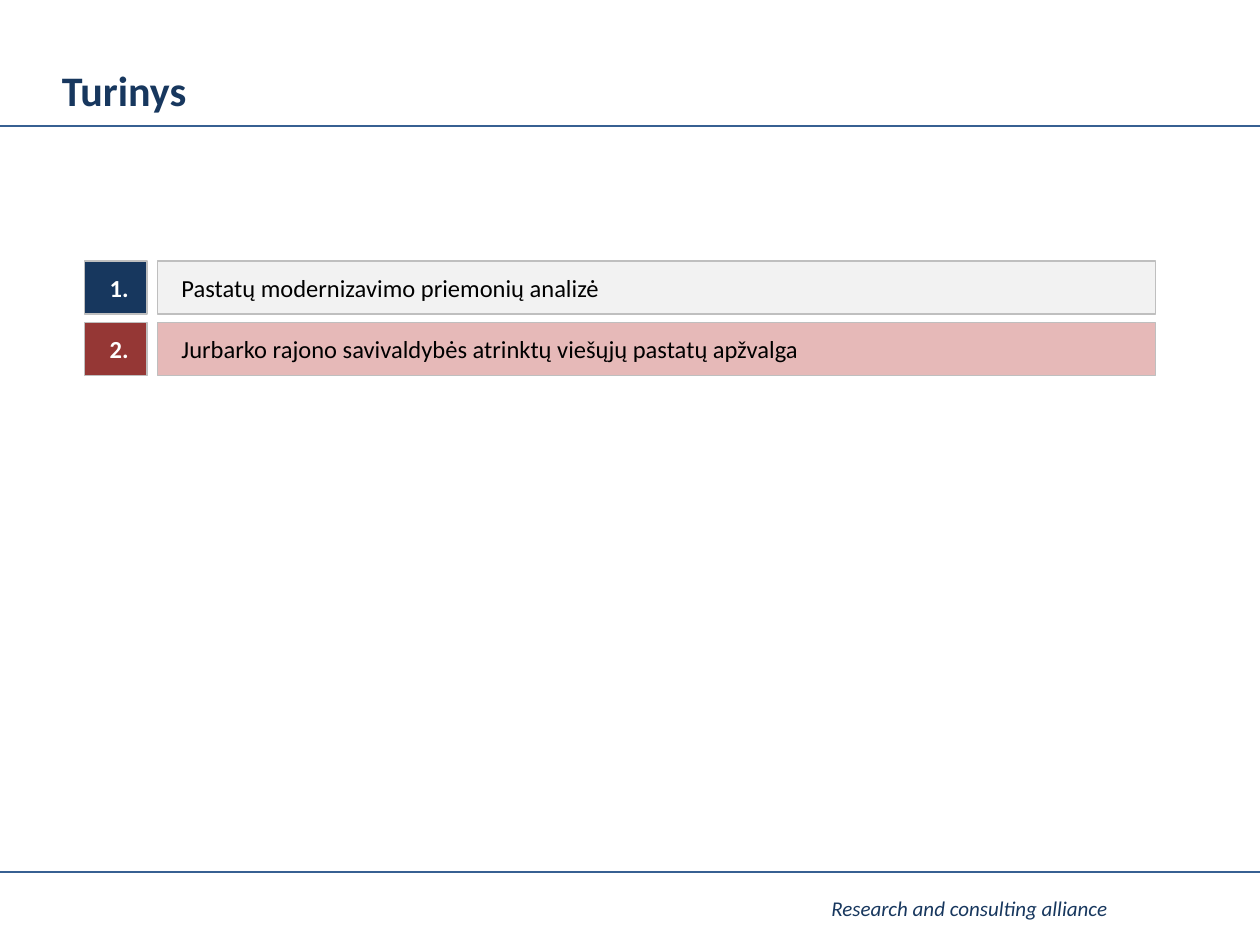
from dataclasses import dataclass

from lxml.etree import SubElement
from pptx import Presentation
from pptx.dml.color import RGBColor
from pptx.enum.shapes import MSO_CONNECTOR, MSO_SHAPE
from pptx.enum.text import MSO_ANCHOR, MSO_AUTO_SIZE, PP_ALIGN
from pptx.oxml.ns import qn
from pptx.util import Inches, Pt


@dataclass(frozen=True)
class Theme:
    font: str = "Calibri"
    navy: str = "17375E"
    rule: str = "376092"
    border: str = "BFBFBF"
    grey: str = "F2F2F2"
    red: str = "953735"
    pink: str = "E6B9B8"
    white: str = "FFFFFF"
    black: str = "000000"
    title_size: int = 24
    item_size: int = 14
    footer_size: int = 12
    line_width: int = 1


THEME = Theme()
SLIDE_WIDTH, SLIDE_HEIGHT = 10, 7.5

AGENDA = [
    ("Pastatų modernizavimo priemonių analizė", THEME.navy, THEME.grey),
    ("Jurbarko rajono savivaldybės atrinktų viešųjų pastatų apžvalga",
     THEME.red, THEME.pink),
]


def rgb(value):
    return RGBColor.from_string(value)


def write(shape, text, size, color, bold=False, italic=False):
    """Fill a shape with one left-aligned, vertically centred paragraph."""
    frame = shape.text_frame
    frame.word_wrap = True
    frame.auto_size = MSO_AUTO_SIZE.NONE
    frame.vertical_anchor = MSO_ANCHOR.MIDDLE
    paragraph = frame.paragraphs[0]
    paragraph.text = text
    paragraph.alignment = PP_ALIGN.LEFT
    font = paragraph.font
    font.name, font.size = THEME.font, Pt(size)
    font.bold, font.italic = bold, italic
    font.color.rgb = rgb(color)
    return paragraph


def add_rule(slide, top):
    """Draw a line across the full slide width."""
    rule = slide.shapes.add_connector(
        MSO_CONNECTOR.STRAIGHT, 0, Inches(top), Inches(SLIDE_WIDTH), Inches(top))
    rule.line.color.rgb = rgb(THEME.rule)
    rule.line.width = Pt(THEME.line_width)
    SubElement(rule._element.spPr, qn("a:effectLst"))


def add_header(slide, left, top, width, height):
    title = slide.shapes.title
    title.left, title.top = Inches(left), Inches(top)
    title.width, title.height = Inches(width), Inches(height)
    write(title, "Turinys", THEME.title_size, THEME.navy, bold=True)
    add_rule(slide, 1)


def add_footer(slide, left, top, width, height):
    add_rule(slide, 6.92)
    tagline = slide.shapes.add_textbox(
        Inches(left), Inches(top), Inches(width), Inches(height))
    write(tagline, "Research and consulting alliance",
          THEME.footer_size, THEME.navy, italic=True)


def add_block(slide, left, top, width, height, fill):
    block = slide.shapes.add_shape(
        MSO_SHAPE.RECTANGLE, Inches(left), Inches(top), Inches(width), Inches(height))
    block.shadow.inherit = False
    block.fill.solid()
    block.fill.fore_color.rgb = rgb(fill)
    block.line.color.rgb = rgb(THEME.border)
    block.line.width = Pt(THEME.line_width)
    return block


def add_agenda(slide, left, top, width, row_height=0.42, row_gap=0.07):
    """Stack numbered rows, each a number block beside a topic bar."""
    number_width, column_gap = 0.5, 0.08
    topic_offset = number_width + column_gap
    for index, (topic, number_fill, topic_fill) in enumerate(AGENDA):
        row_top = top + index * (row_height + row_gap)
        number = add_block(slide, left, row_top, number_width, row_height, number_fill)
        number.text_frame.margin_left = Inches(0.2)
        write(number, f"{index + 1}.", THEME.item_size, THEME.white, bold=True)

        bar = add_block(slide, left + topic_offset, row_top,
                        width - topic_offset, row_height, topic_fill)
        bar.text_frame.margin_left = Inches(0.19)
        write(bar, topic, THEME.item_size, THEME.black)


def main():
    deck = Presentation()
    deck.slide_width, deck.slide_height = Inches(SLIDE_WIDTH), Inches(SLIDE_HEIGHT)
    slide = deck.slides.add_slide(deck.slide_layouts.get_by_name("Title Only"))
    add_header(slide, 0.39, 0.45, 9, 0.53)
    add_agenda(slide, 0.67, 2.07, 8.5)
    add_footer(slide, 6.5, 7.06, 3.46, 0.29)
    deck.save("out.pptx")


if __name__ == "__main__":
    main()
